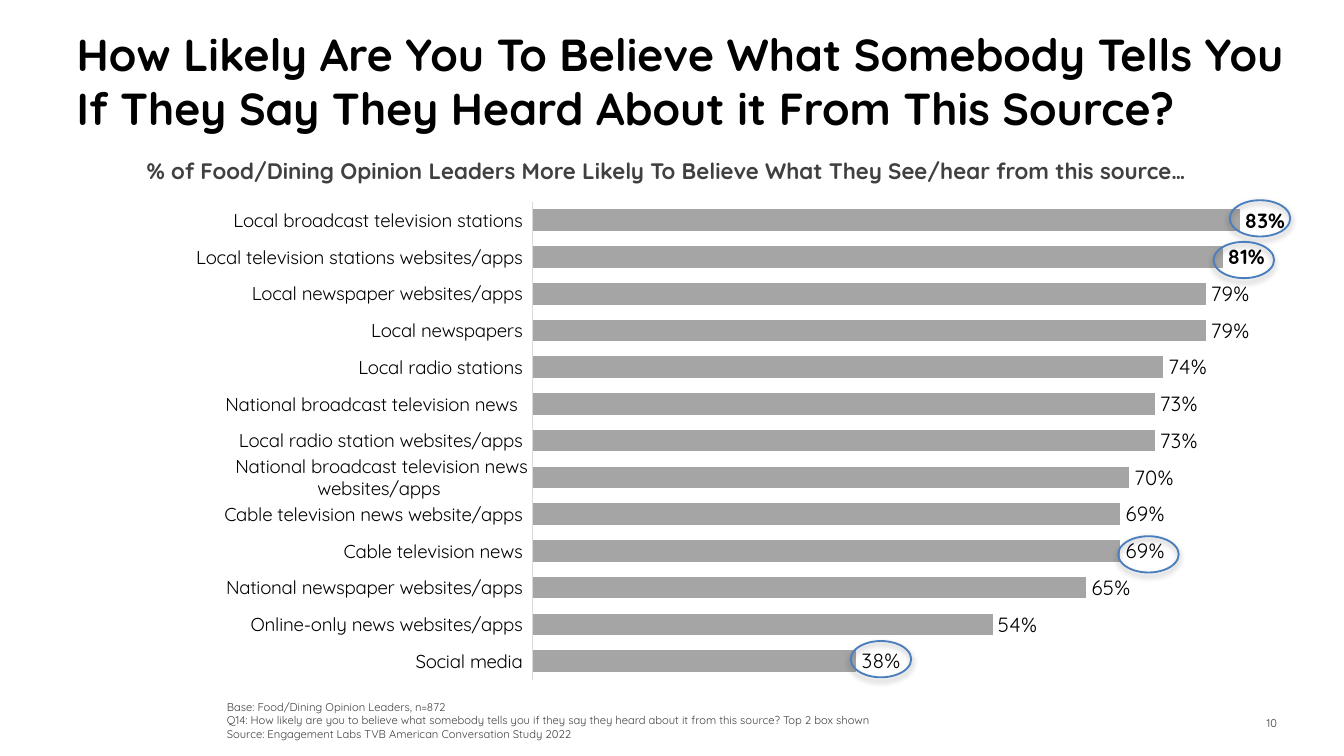
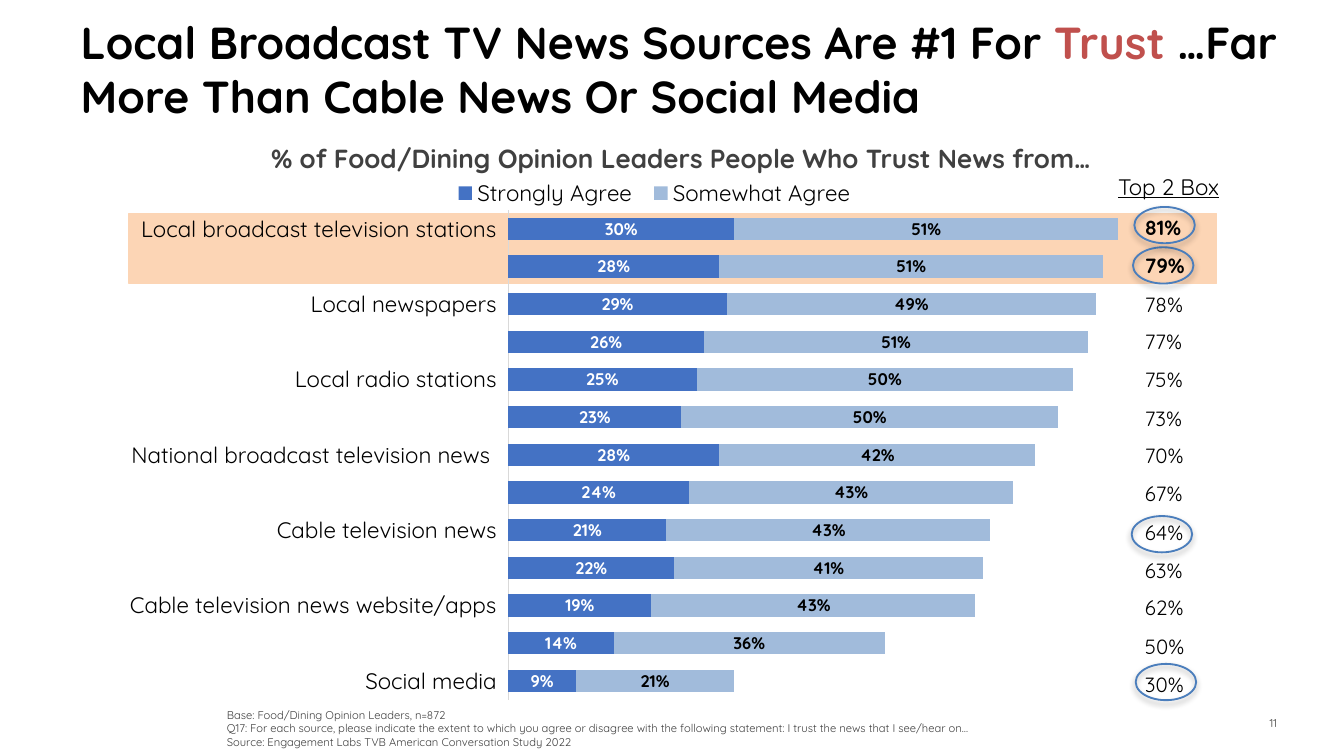
from lxml import etree
from pptx import Presentation
from pptx.chart.data import CategoryChartData
from pptx.dml.color import RGBColor
from pptx.enum.chart import XL_CHART_TYPE, XL_LABEL_POSITION, XL_LEGEND_POSITION, XL_TICK_MARK
from pptx.enum.shapes import MSO_SHAPE
from pptx.enum.text import MSO_ANCHOR, MSO_AUTO_SIZE, PP_ALIGN
from pptx.oxml import parse_xml
from pptx.oxml.ns import nsdecls, qn
from pptx.util import Pt

PX = 9144
FONT = "Quicksand"
BLACK, DARK, RED, FOOT = "000000", "404040", "C0504D", "3C3C3A"
RING, BAND, AXIS = "4B7EBC", "FCD5B5", "D9D9D9"
GREY, BLUE, PALE, WHITE = "A5A5A5", "4472C4", "A1BBDB", "FFFFFF"
LEFT, MID, RIGHT = PP_ALIGN.LEFT, PP_ALIGN.CENTER, PP_ALIGN.RIGHT
TOP, CENTER, BOTTOM = MSO_ANCHOR.TOP, MSO_ANCHOR.MIDDLE, MSO_ANCHOR.BOTTOM
OUT, IN = XL_LABEL_POSITION.OUTSIDE_END, XL_LABEL_POSITION.CENTER
NONE = XL_TICK_MARK.NONE
PERCENT = "#,##0%"
SHADE = (f'<a:effectLst {nsdecls("a")}><a:outerShdw blurRad="40000" dist="23000" '
         'dir="5400000" rotWithShape="0"><a:srgbClr val="000000">'
         '<a:alpha val="35000"/></a:srgbClr></a:outerShdw></a:effectLst>')

LOCAL = "Local broadcast television stations "
LOCAL_WEB = "Local television stations websites/apps "
PAPER = "Local newspapers "
PAPER_WEB = "Local newspaper websites/apps "
RADIO = "Local radio stations "
RADIO_WEB = "Local radio station websites/apps "
NATION = "National broadcast television news  "
NATION_WEB = "National broadcast television news websites/apps "
CABLE = "Cable television news "
CABLE_WEB = "Cable television news website/apps "
PRESS_WEB = "National newspaper websites/apps "
ONLINE = "Online-only news websites/apps "
SOCIAL = "Social media "

PAGES = [
    dict(
        title=[("How Likely Are You To Believe What Somebody Tells You "
                "If They Say They Heard About it From This Source?", BLACK)],
        spot=(47, 15, 921, 90), inset=5,
        sub="% of Food/Dining Opinion Leaders More Likely To Believe "
            "What They See/hear from this source…",
        place=(97, 112, 798, 50), size=12,
        ask="Q14: How likely are you to believe what somebody tells you if they say "
            "they heard about it from this source? Top 2 box shown",
        note=(159, 516, 810, 40), bands=[],
        kind=XL_CHART_TYPE.BAR_CLUSTERED, frame=(98, 135, 883, 383),
        area=(0.338, 0.04, 0.646, 0.928), cat=10,
        names=[LOCAL, LOCAL_WEB, PAPER_WEB, PAPER, RADIO, NATION, RADIO_WEB,
               NATION_WEB, CABLE_WEB, CABLE, PRESS_WEB, ONLINE, SOCIAL],
        rows=[("Series 1", GREY, BLACK, 11, False, OUT,
               [83, 81, 79, 79, 74, 73, 73, 70, 69, 69, 65, 54, 38])],
        rings=[(915, 149), (903, 180), (832, 399), (633, 477)]),
    dict(
        title=[("Local Broadcast TV News Sources Are #1 For ", BLACK), ("Trust ", RED),
               ("…Far More Than Cable News Or Social Media", BLACK)],
        spot=(50, 11, 932, 94), inset=0,
        sub="% of Food/Dining Opinion Leaders People Who Trust News from…",
        place=(190, 101, 634, 34), size=14,
        ask="Q17: For each source, please indicate the extent to which you agree or "
            "disagree with the following statement: I trust the news that I see/hear on…",
        note=(159, 522, 824, 40), bands=[185, 159],
        kind=XL_CHART_TYPE.BAR_STACKED, frame=(75, 104, 824, 418),
        area=(0.368, 0.125, 0.612, 0.872), cat=12,
        names=[LOCAL, LOCAL_WEB, PAPER, PAPER_WEB, RADIO, RADIO_WEB, NATION,
               NATION_WEB, CABLE, PRESS_WEB, CABLE_WEB, ONLINE, SOCIAL],
        rows=[("Strongly Agree", BLUE, WHITE, 9, True, IN,
               [30, 28, 29, 26, 25, 23, 28, 24, 21, 22, 19, 14, 9]),
              ("Somewhat Agree", PALE, BLACK, 9, True, IN,
               [51, 51, 49, 51, 50, 50, 42, 43, 43, 41, 43, 36, 21])],
        rings=[(843, 184), (842, 384), (844, 154), (845, 494)]),
]


def style(font, size, color=BLACK, bold=False):
    font.name, font.size, font.bold = FONT, Pt(size), bold
    font.color.rgb = RGBColor.from_string(color)


def write(slide, place, text, size, color=BLACK, bold=False, align=LEFT, anchor=TOP, wrap=True):
    box = slide.shapes.add_textbox(*[n * PX for n in place])
    frame = box.text_frame
    frame.text, frame.word_wrap, frame.vertical_anchor = text, wrap, anchor
    for para in frame.paragraphs:
        para.alignment = align
        for run in para.runs:
            style(run.font, size, color, bold)
    return frame


deck = Presentation()
deck.slide_width, deck.slide_height = 1000 * PX, 1125 * PX // 2
deck.element.set("firstSlideNum", "10")
layout = next(x for x in deck.slide_layouts if x.name == "Title Only")

for num, page in enumerate(PAGES, 10):
    slide = deck.slides.add_slide(layout)
    head = slide.shapes.title
    head.left, head.top, head.width, head.height = [n * PX for n in page["spot"]]
    frame = head.text_frame
    frame.word_wrap, frame.auto_size = True, MSO_AUTO_SIZE.NONE
    frame.vertical_anchor, frame.margin_top = TOP, page["inset"] * PX
    frame.paragraphs[0].alignment = LEFT
    for text, color in page["title"]:
        run = frame.paragraphs[0].add_run()
        run.text = text
        style(run.font, 24, color, True)

    for top in page["bands"]:
        band = slide.shapes.add_shape(MSO_SHAPE.RECTANGLE, 96 * PX, top * PX, 809 * PX, 26 * PX)
        band.shadow.inherit = False
        band.fill.solid()
        band.fill.fore_color.rgb = RGBColor.from_string(BAND)
        band.line.color.rgb = RGBColor.from_string(BAND)
        band.line.width = Pt(0.75)

    data = CategoryChartData(number_format=PERCENT)
    data.categories = page["names"]
    for row in page["rows"]:
        data.add_series(row[0], [n / 100 for n in row[-1]])
    chart = slide.shapes.add_chart(page["kind"], *[n * PX for n in page["frame"]], data).chart
    chart.has_title = False
    style(chart.font, 10)
    stack = len(page["rows"]) > 1
    chart.has_legend = stack
    plot = chart.plots[0]
    plot.gap_width, plot.vary_by_categories = 70, False
    if stack:
        plot.overlap = 100
    axis = chart.category_axis
    axis.reverse_order = True
    axis.major_tick_mark = axis.minor_tick_mark = NONE
    axis.has_major_gridlines = False
    axis.format.line.color.rgb = RGBColor.from_string(AXIS)
    axis.format.line.width = Pt(0.75)
    style(axis.tick_labels.font, page["cat"])
    scale = chart.value_axis
    scale.visible = scale.has_major_gridlines = False
    scale.minimum_scale, scale.maximum_scale = 0, 0.9
    scale.tick_labels.number_format = PERCENT
    scale.tick_labels.number_format_is_linked = False

    for series, (name, fill, ink, size, bold, spot, vals) in zip(plot.series, page["rows"]):
        series.format.fill.solid()
        series.format.fill.fore_color.rgb = RGBColor.from_string(fill)
        label = series.data_labels
        label.show_value, label.position = True, spot
        label.number_format, label.number_format_is_linked = PERCENT, False
        style(label.font, size, ink, bold)
        if not stack:
            for i in range(2):
                lead = series.points[i].data_label
                style(lead.font, size, ink, True)
                lead.position = spot

    body = chart.element.find(".//" + qn("c:plotArea"))
    for old in body.findall(qn("c:layout")):
        body.remove(old)
    areas = [(body, 0, page["area"], True)]
    if stack:
        chart.legend.position = XL_LEGEND_POSITION.TOP
        chart.legend.include_in_layout = False
        style(chart.legend.font, 12)
        key = chart.element.find(".//" + qn("c:legend"))
        for old in key.findall(qn("c:layout")):
            key.remove(old)
        areas.append((key, 1, (0.31, 0.06, 0.38, 0.07), False))
    for part, at, area, inner in areas:
        lay = etree.Element(qn("c:layout"))
        man = etree.SubElement(lay, qn("c:manualLayout"))
        pairs = [("layoutTarget", "inner")] if inner else []
        pairs += [("xMode", "edge"), ("yMode", "edge"), *zip("xywh", area)]
        for tag, val in pairs:
            etree.SubElement(man, qn("c:" + tag)).set("val", str(val))
        part.insert(at, lay)

    base = "Base: Food/Dining Opinion Leaders, n=872"
    cite = "Source: Engagement Labs TVB American Conversation Study 2022"
    write(slide, page["note"], "\n".join([base, page["ask"], cite]), 6, DARK, anchor=BOTTOM)
    write(slide, page["place"], page["sub"], page["size"], DARK, True, MID, wrap=False)

    if stack:
        tag = write(slide, (822, 124, 118, 42), "Top 2 Box", 12)
        tag.paragraphs[0].runs[0].font.underline = True
        pairs = zip(*[row[-1] for row in page["rows"]])
        for i, pair in enumerate(pairs):
            write(slide, (842, 155 + round(i * 85 / 3), 50, 27), f"{sum(pair)}%", 11, bold=i < 2)

    for left, top in page["rings"]:
        ring = slide.shapes.add_shape(MSO_SHAPE.OVAL, left * PX, top * PX, 45 * PX, 27 * PX)
        ring.fill.background()
        ring.line.color.rgb = RGBColor.from_string(RING)
        ring.line.width = Pt(1)
        ring.element.spPr.append(parse_xml(SHADE))

    foot = write(slide, (904, 522, 59, 30), str(num), 6, FOOT, align=RIGHT, anchor=CENTER)
    para = foot.paragraphs[0]
    field = para.runs[0].font._element.getparent()
    space = para.add_run()
    space.text = " "
    style(space.font, 8, FOOT)
    field.tag = qn("a:fld")
    field.set("id", "{B6F15528-21DE-4FAA-801E-634DDDAF4B2B}")
    field.set("type", "slidenum")

deck.save("out.pptx")
